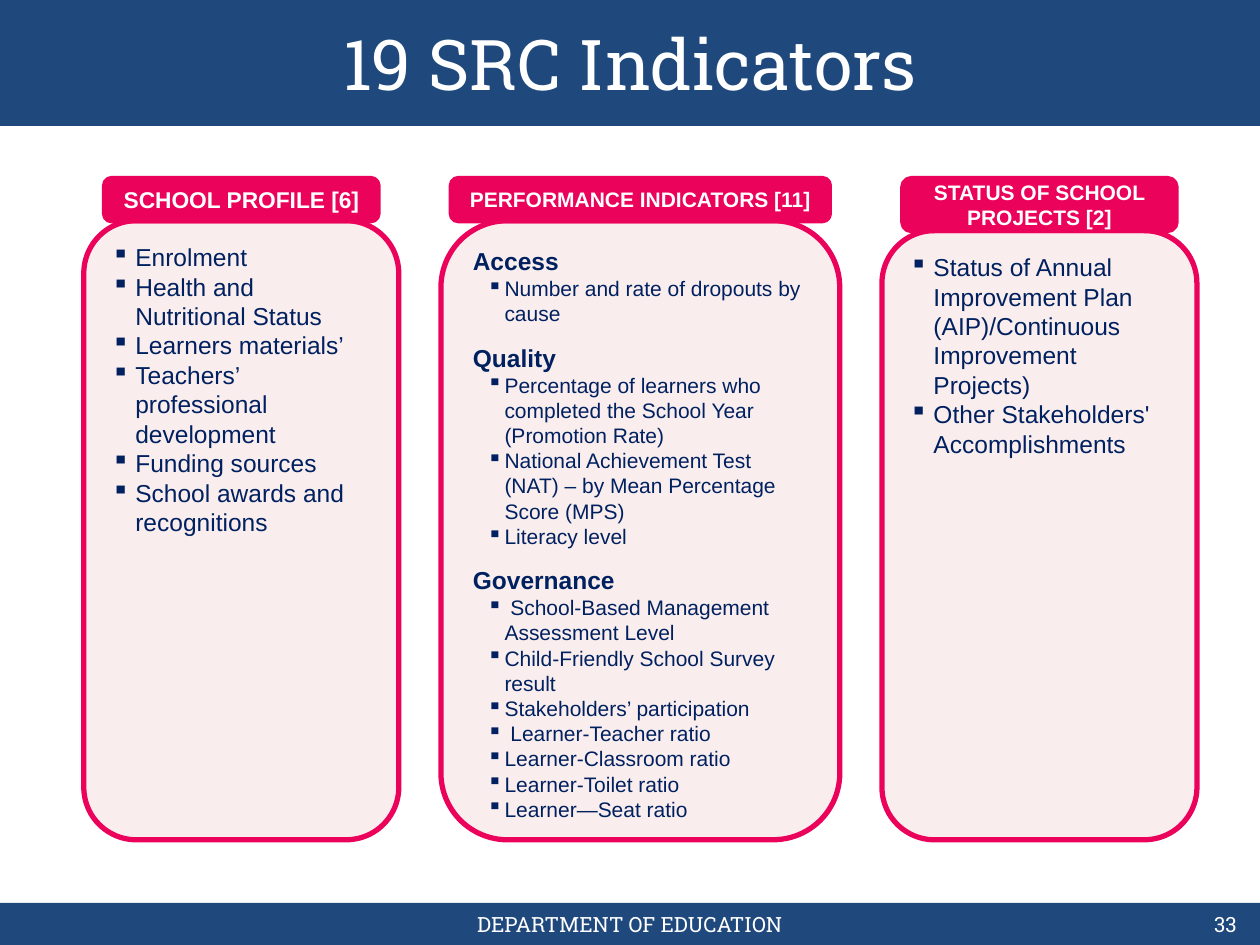
import pptx
import pptx.util
import pptx.dml.color
import pptx.enum.shapes
import pptx.enum.text
import pptx.oxml.ns
from dataclasses import dataclass
from lxml import etree

Cm = pptx.util.Cm
Pt = pptx.util.Pt
SHAPES = pptx.enum.shapes.MSO_SHAPE
ALIGN = pptx.enum.text.PP_ALIGN
ANCHOR = pptx.enum.text.MSO_ANCHOR


@dataclass(frozen=True)
class Theme:
    navy: str = "1F497D"
    pink: str = "EB035B"
    blush: str = "F9EEED"
    ink: str = "002060"
    white: str = "FFFFFF"
    body_font: str = "Arial"
    band_font: str = "Roboto Slab"
    title_size: int = 40
    text_size: int = 14
    detail_size: int = 12
    border: int = 3


THEME = Theme()
PAGE_WIDTH, PAGE_HEIGHT = 25.4, 19.05
TITLE_HEIGHT, FOOTER_HEIGHT = 2.54, 0.85
BADGE_TOP, PANEL_BOTTOM = 3.6, 16.93

PROFILE = [
    "Enrolment",
    "Health and Nutritional Status",
    "Learners materials’",
    "Teachers’ professional development",
    "Funding sources",
    "School awards and recognitions",
]
PERFORMANCE = {
    "Access": ["Number and rate of dropouts by cause"],
    "Quality": [
        "Percentage of learners who completed the School Year (Promotion Rate)",
        "National Achievement Test (NAT) – by Mean Percentage Score (MPS)",
        "Literacy level",
    ],
    "Governance": [
        " School-Based Management Assessment Level",
        "Child-Friendly School Survey result",
        "Stakeholders’ participation",
        " Learner-Teacher ratio",
        "Learner-Classroom ratio",
        "Learner-Toilet ratio",
        "Learner—Seat ratio",
    ],
}
PROJECTS = [
    "Status of Annual Improvement Plan (AIP)/Continuous Improvement Projects)",
    "Other Stakeholders' Accomplishments",
]


def rgb(color):
    return pptx.dml.color.RGBColor.from_string(color)


def style_para(para, size, color, font=THEME.body_font, bold=False, align=ALIGN.LEFT):
    para.alignment = align
    for span in para.runs:
        span.font.size = Pt(size)
        span.font.name = font
        span.font.bold = bold
        span.font.color.rgb = rgb(color)


def add_bullet(para, indent, hanging):
    properties = para._p.get_or_add_pPr()
    properties.set("marL", str(Cm(indent)))
    properties.set("indent", str(-Cm(hanging)))
    mark = etree.SubElement(properties, pptx.oxml.ns.qn("a:buChar"))
    mark.set("char", "▪")


def add_block(page, kind, left, top, width, height, fill, line=None):
    box = page.shapes.add_shape(kind, Cm(left), Cm(top), Cm(width), Cm(height))
    box.shadow.inherit = False
    box.fill.solid()
    box.fill.fore_color.rgb = rgb(fill)
    if line:
        box.line.color.rgb = rgb(line)
        box.line.width = Pt(THEME.border)
    else:
        box.line.fill.background()
    return box


def add_label(page, text, left, top, width, height, size, align=ALIGN.CENTER):
    box = page.shapes.add_textbox(Cm(left), Cm(top), Cm(width), Cm(height))
    frame = box.text_frame
    frame.word_wrap = True
    frame.vertical_anchor = ANCHOR.MIDDLE
    frame.text = text
    style_para(frame.paragraphs[0], size, THEME.white, THEME.band_font, align=align)


def add_column(page, title, title_size, left, width, badge_inset, badge_height):
    """Draw a panel with its badge and return the panel's text frame."""
    top = BADGE_TOP + badge_height
    panel = add_block(page, SHAPES.ROUNDED_RECTANGLE, left, top, width,
                      PANEL_BOTTOM - top, THEME.blush, THEME.pink)
    panel.text_frame.vertical_anchor = ANCHOR.TOP
    badge = add_block(page, SHAPES.ROUNDED_RECTANGLE, left + badge_inset, BADGE_TOP,
                      width - 2 * badge_inset, badge_height, THEME.pink, THEME.pink)
    frame = badge.text_frame
    frame.vertical_anchor = ANCHOR.MIDDLE
    frame.text = title
    style_para(frame.paragraphs[0], title_size, THEME.white, bold=True, align=ALIGN.CENTER)
    return panel.text_frame


def fill_list(frame, items):
    frame.text = "\n".join(items)
    for para in frame.paragraphs:
        style_para(para, THEME.text_size, THEME.ink)
        add_bullet(para, 0.48, 0.48)


def fill_groups(frame, groups):
    frame.text = "\n".join(line for heading, items in groups.items()
                           for line in [heading, *items])
    for number, para in enumerate(frame.paragraphs):
        if para.text in groups:
            style_para(para, THEME.text_size, THEME.ink, bold=True)
            para.space_before = Pt(9.5 if number else 0)
        else:
            para.level = 1
            style_para(para, THEME.detail_size, THEME.ink)
            add_bullet(para, 0.64, 0.35)


def main():
    deck = pptx.Presentation()
    deck.slide_width, deck.slide_height = Cm(PAGE_WIDTH), Cm(PAGE_HEIGHT)
    page = deck.slides.add_slide(deck.slide_layouts[6])

    # Title and footer bands
    footer_top = PAGE_HEIGHT - FOOTER_HEIGHT
    add_block(page, SHAPES.RECTANGLE, 0, footer_top, PAGE_WIDTH, FOOTER_HEIGHT, THEME.navy)
    add_block(page, SHAPES.RECTANGLE, 0, 0, PAGE_WIDTH, TITLE_HEIGHT, THEME.navy)
    add_label(page, "DEPARTMENT OF EDUCATION", 8.68, footer_top, 8.04, FOOTER_HEIGHT,
              THEME.detail_size)
    add_label(page, "19 SRC Indicators", 1.27, 0, 22.86, TITLE_HEIGHT, THEME.title_size)
    add_label(page, "33", 19.26, footer_top, 5.92, FOOTER_HEIGHT, THEME.detail_size,
              ALIGN.RIGHT)

    # Indicator columns
    profile = add_column(page, "SCHOOL PROFILE [6]", 13, 1.69, 6.35, 0.42, 0.85)
    fill_list(profile, PROFILE)
    performance = add_column(page, "PERFORMANCE INDICATORS [11]", 12, 8.89, 8.04, 0.21, 0.85)
    fill_groups(performance, PERFORMANCE)
    projects = add_column(page, "STATUS OF SCHOOL PROJECTS [2]", 12, 17.78, 6.35, 0.42, 1.05)
    fill_list(projects, PROJECTS)

    deck.save("out.pptx")


if __name__ == "__main__":
    main()
